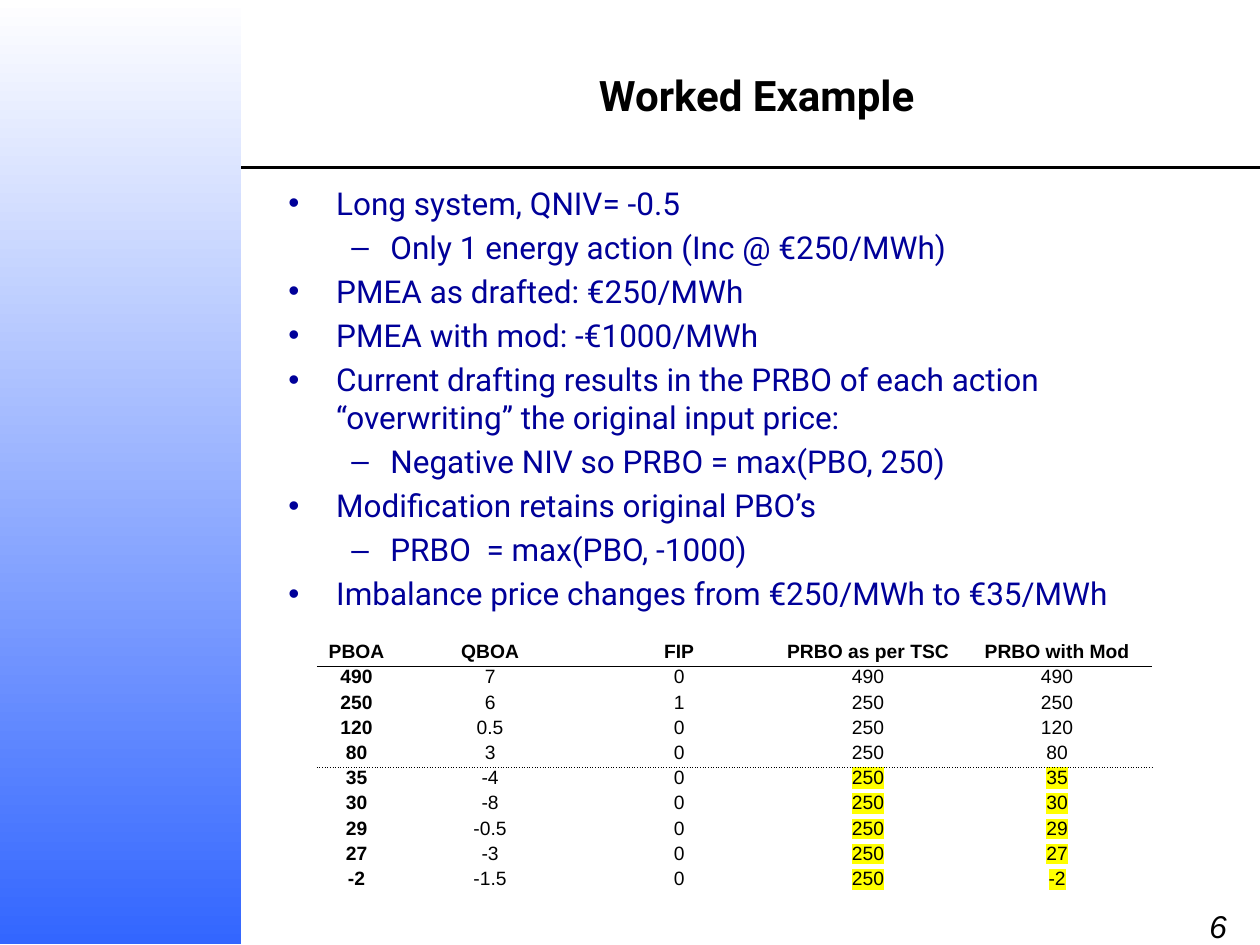
from dataclasses import dataclass

from lxml.etree import SubElement
from pptx import Presentation
from pptx.dml.color import RGBColor
from pptx.enum.dml import MSO_LINE
from pptx.enum.shapes import MSO_CONNECTOR, MSO_SHAPE
from pptx.enum.text import MSO_ANCHOR, PP_ALIGN
from pptx.oxml.ns import qn
from pptx.slide import Slide
from pptx.table import _Cell
from pptx.text.text import Font, _Paragraph
from pptx.util import Inches, Pt


@dataclass(frozen=True)
class Theme:
    black: str = "000000"
    white: str = "FFFFFF"
    band: str = "3366FF"
    body: str = "000099"
    highlight: str = "FFFF00"
    text_font: str = "Roboto"
    table_font: str = "Arial"
    title_size: int = 24
    body_size: int = 18
    table_size: int = 11


@dataclass(frozen=True)
class Level:
    mark: str
    margin: float
    hanging: float


@dataclass(frozen=True)
class Point:
    text: str
    level: int = 0


@dataclass(frozen=True)
class Action:
    pboa: str
    qboa: str
    fip: str
    as_drafted: str
    with_mod: str
    highlighted: bool = False

    def values(self) -> tuple[str, ...]:
        return self.pboa, self.qboa, self.fip, self.as_drafted, self.with_mod


@dataclass(frozen=True)
class Border:
    color: str
    dash: str = "solid"


THEME = Theme()
LEVELS = (Level("•", 0.38, 0.38), Level("–", 0.81, 0.31))
POINTS = (
    Point("Long system, QNIV= -0.5"),
    Point("Only 1 energy action (Inc @ €250/MWh)", 1),
    Point("PMEA as drafted: €250/MWh"),
    Point("PMEA with mod: -€1000/MWh"),
    Point("Current drafting results in the PRBO of each action “overwriting” the original input price:"),
    Point("Negative NIV so PRBO = max(PBO, 250)", 1),
    Point("Modification retains original PBO’s"),
    Point("PRBO  = max(PBO, -1000)", 1),
    Point("Imbalance price changes from €250/MWh to €35/MWh"),
)
ACTIONS = (
    Action("PBOA", "QBOA", "FIP", "PRBO as per TSC", "PRBO with Mod"),
    Action("490", "7", "0", "490", "490"),
    Action("250", "6", "1", "250", "250"),
    Action("120", "0.5", "0", "250", "120"),
    Action("80", "3", "0", "250", "80"),
    Action("35", "-4", "0", "250", "35", True),
    Action("30", "-8", "0", "250", "30", True),
    Action("29", "-0.5", "0", "250", "29", True),
    Action("27", "-3", "0", "250", "27", True),
    Action("-2", "-1.5", "0", "250", "-2", True),
)
COLUMN_WIDTHS = (0.62, 1.5, 1.5, 1.5, 1.5)
ROW_HEIGHT = 0.2
PLAIN = Border(THEME.white)
RULES_BELOW = {0: Border(THEME.black), 4: Border(THEME.black, "sysDot")}


def style_font(font: Font, name: str, size: int, color: str, bold: bool = False, italic: bool = False) -> None:
    font.name, font.size, font.bold, font.italic = name, Pt(size), bold, italic
    font.color.rgb = RGBColor.from_string(color)


def draw_band_and_rule(slide: Slide) -> None:
    rule = slide.shapes.add_connector(MSO_CONNECTOR.STRAIGHT, Inches(0), Inches(1.33), Inches(10), Inches(1.33))
    rule.line.width = Pt(2)
    rule.line.color.rgb = RGBColor.from_string(THEME.black)
    SubElement(rule._element.spPr, qn("a:effectLst"))
    band = slide.shapes.add_shape(MSO_SHAPE.RECTANGLE, Inches(0), Inches(-0.01), Inches(1.91), Inches(7.5))
    band.shadow.inherit = False
    band.line.fill.background()
    band.fill.gradient()
    band.fill.gradient_angle = 270
    for stop, color in zip(band.fill.gradient_stops, (THEME.white, THEME.band)):
        stop.color.rgb = RGBColor.from_string(color)


def draw_page_number(slide: Slide) -> None:
    number = slide.shapes.add_textbox(Inches(9.5), Inches(7.15), Inches(0.5), Inches(0.7)).text_frame
    number.word_wrap = True
    number.text = "6"
    style_font(number.paragraphs[0].runs[0].font, THEME.table_font, THEME.body_size, THEME.black, italic=True)


def draw_title(slide: Slide) -> None:
    title = slide.shapes.add_textbox(Inches(2.35), Inches(0.17), Inches(7.31), Inches(1.17)).text_frame
    title.word_wrap = True
    title.vertical_anchor = MSO_ANCHOR.MIDDLE
    title.text = "Worked Example"
    title.paragraphs[0].alignment = PP_ALIGN.CENTER
    style_font(title.paragraphs[0].runs[0].font, THEME.text_font, THEME.title_size, THEME.black, bold=True)


def set_bullet(paragraph: _Paragraph, level: Level) -> None:
    properties = paragraph._p.get_or_add_pPr()
    properties.set("marL", str(Inches(level.margin)))
    properties.set("indent", str(-Inches(level.hanging)))
    SubElement(properties, qn("a:buFont"), typeface=THEME.table_font)
    SubElement(properties, qn("a:buChar"), char=level.mark)


def draw_points(slide: Slide) -> None:
    body = slide.shapes.add_textbox(Inches(2.19), Inches(1.41), Inches(7.48), Inches(5.93)).text_frame
    body.word_wrap = True
    for index, point in enumerate(POINTS):
        paragraph = body.add_paragraph() if index else body.paragraphs[0]
        paragraph.text = point.text
        paragraph.level = point.level
        set_bullet(paragraph, LEVELS[point.level])
        if index:
            paragraph.space_before = Pt(THEME.body_size * 0.2)
        style_font(paragraph.runs[0].font, THEME.text_font, THEME.body_size, THEME.body)


def set_borders(cell: _Cell, top: Border, bottom: Border) -> None:
    properties = cell._tc.get_or_add_tcPr()
    for position, (side, border) in enumerate(zip("LRTB", (PLAIN, PLAIN, top, bottom))):
        line = SubElement(properties, qn(f"a:ln{side}"), w=str(Pt(1)))
        fill = SubElement(line, qn("a:solidFill"))
        SubElement(fill, qn("a:srgbClr"), val=border.color)
        SubElement(line, qn("a:prstDash"), val=border.dash)
        properties.insert(position, line)


def highlight(font: Font) -> None:
    mark = SubElement(font._element, qn("a:highlight"))
    SubElement(mark, qn("a:srgbClr"), val=THEME.highlight)
    font._element.find(qn("a:solidFill")).addnext(mark)


def fill_cell(cell: _Cell, text: str, bold: bool, highlighted: bool) -> None:
    cell.margin_left = cell.margin_right = Inches(0.07)
    cell.margin_top = cell.margin_bottom = 0
    cell.fill.background()
    cell.text_frame.text = text
    paragraph = cell.text_frame.paragraphs[0]
    paragraph.alignment = PP_ALIGN.CENTER
    font = paragraph.runs[0].font
    style_font(font, THEME.table_font, THEME.table_size, THEME.black, bold)
    if highlighted:
        highlight(font)


def draw_actions(slide: Slide) -> None:
    actions = slide.shapes.add_table(
        len(ACTIONS), len(COLUMN_WIDTHS), Inches(2.52), Inches(5.09),
        Inches(sum(COLUMN_WIDTHS)), Inches(ROW_HEIGHT * len(ACTIONS)),
    ).table
    actions.first_row = actions.horz_banding = False
    for column, width in zip(actions.columns, COLUMN_WIDTHS):
        column.width = Inches(width)
    for r, action in enumerate(ACTIONS):
        actions.rows[r].height = Inches(ROW_HEIGHT)
        for c, value in enumerate(action.values()):
            cell = actions.cell(r, c)
            fill_cell(cell, value, r == 0 or c == 0, action.highlighted and c >= 3)
            set_borders(cell, RULES_BELOW.get(r - 1, PLAIN), RULES_BELOW.get(r, PLAIN))


def main() -> None:
    """Build the worked example slide and save it."""
    deck = Presentation()
    deck.slide_width, deck.slide_height = Inches(10), Inches(7.5)
    slide = deck.slides.add_slide(deck.slide_layouts[6])
    for draw in (draw_band_and_rule, draw_page_number, draw_title, draw_points, draw_actions):
        draw(slide)
    deck.save("out.pptx")


if __name__ == "__main__":
    main()
